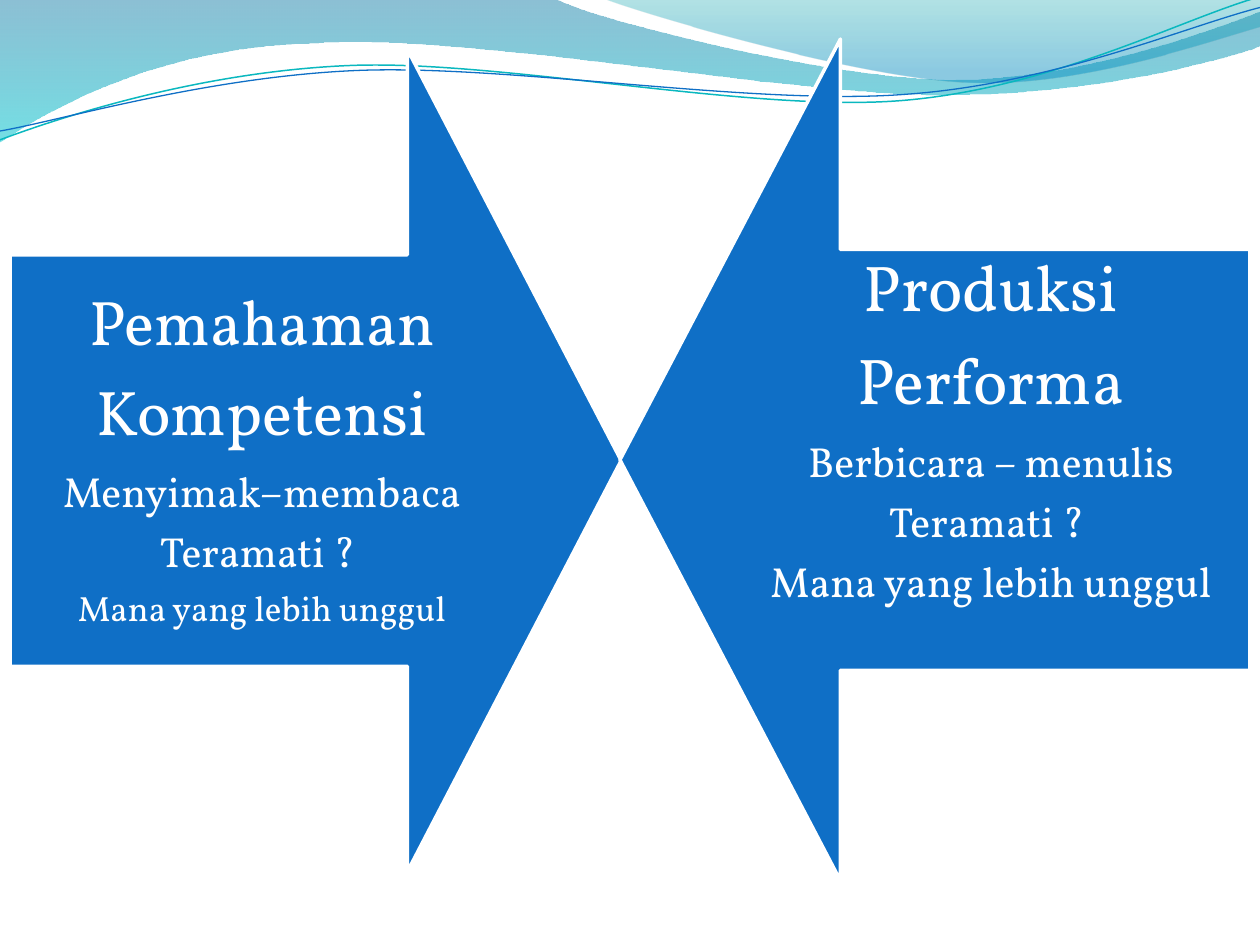
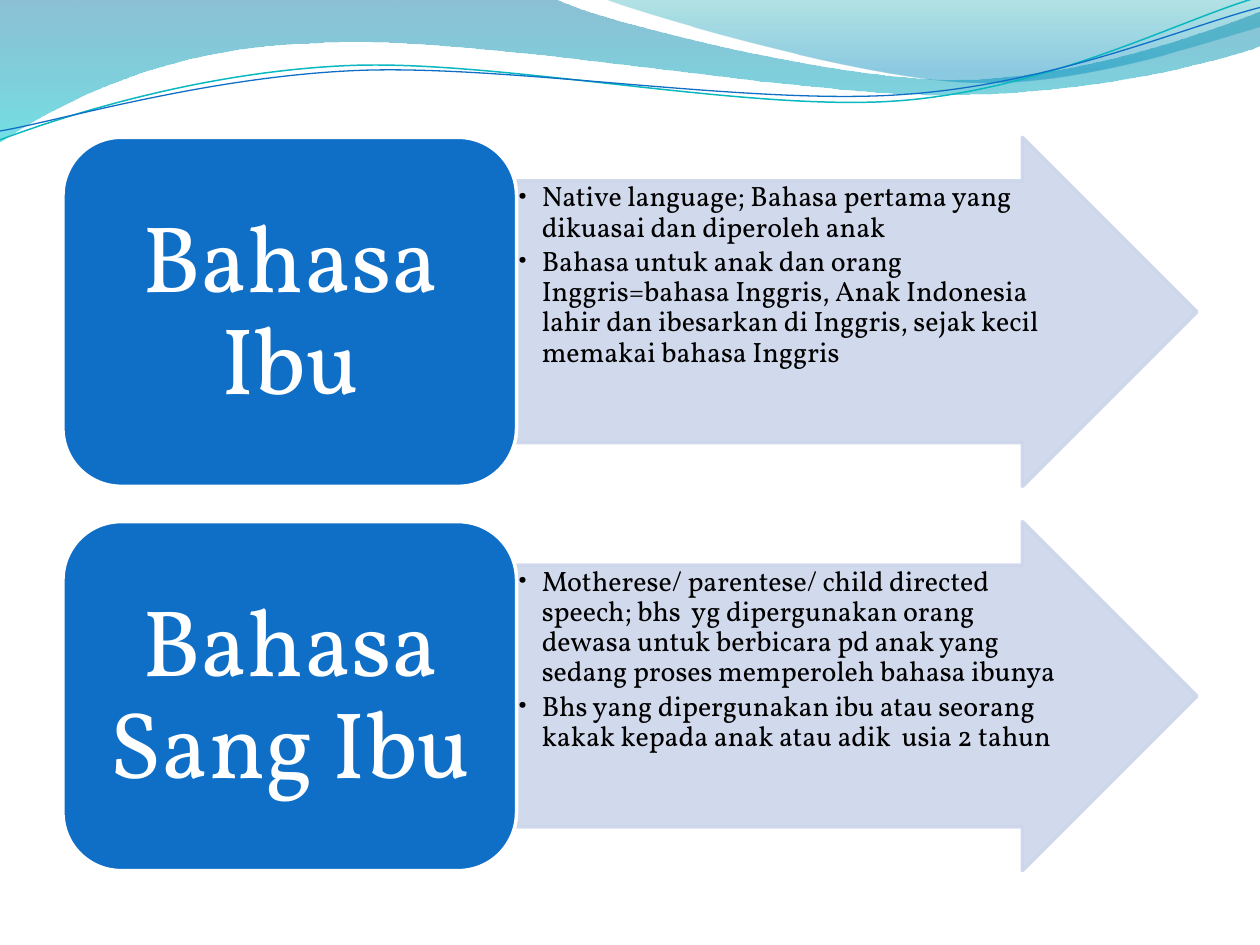
from dataclasses import dataclass
from math import cos, radians, sin

from lxml.etree import SubElement
from pptx import Presentation
from pptx.dml.color import RGBColor
from pptx.enum.shapes import MSO_SHAPE
from pptx.enum.text import MSO_ANCHOR, PP_ALIGN
from pptx.oxml.ns import qn
from pptx.util import Inches, Pt


@dataclass(frozen=True)
class Theme:
    font: str = "Vollkorn"
    blue: str = "0F6FC6"
    teal: str = "0AB8BF"
    pale: str = "CCD5EA"
    white: str = "FFFFFF"
    black: str = "000000"
    left_wave: tuple = ((0, "0074A1", 45), (1, "00C6CF", 55))
    right_wave: tuple = ((0, "00A1A9", 30), (0.8, "008BBF", 45))
    label_size: int = 54
    body_size: int = 16
    left_heading_size: int = 36
    right_heading_size: int = 37
    detail_size: int = 24
    small_size: int = 20
    outline: float = 2
    line_spacing: float = 0.9


THEME = Theme()
WAVE_TILT = -2.7

LEFT_WAVE = [
    [(0, 0)],
    [(4.4, -0.01)],
    [(4.76, 0.17), (6.64, 0.63), (7.58, 0.63)],
    [(8.53, 0.63), (9.58, 0.26), (10, 0.09)],
    [(10.01, 0.36)],
    [(9.83, 0.44), (8.7, 0.76), (7.46, 0.75)],
    [(6.22, 0.75), (3.82, 0.28), (2.57, 0.34)],
    [(1.29, 0.36), (0.46, 0.83), (-0.01, 1.13)],
    [(0, 0)],
]
RIGHT_WAVE = [
    [(4.79, -0.01)],
    [(5.09, 0.11), (6.82, 0.62), (7.69, 0.65)],
    [(8.56, 0.69), (9.61, 0.32), (10, 0.21)],
    [(10, 0)],
    [(4.79, -0.01)],
]
TEAL_WAVE = [
    [(0, 1.11)],
    [(0.48, 0.93), (1.58, 0.57), (2.77, 0.52)],
    [(3.95, 0.47), (5.93, 0.89), (7.13, 0.8)],
    [(8.33, 0.71), (9.38, 0.15), (9.98, -0.02)],
]
BLUE_WAVE = [
    [(0, 1.04)],
    [(0.47, 0.96), (1.64, 0.61), (2.83, 0.56)],
    [(4.03, 0.51), (5.97, 0.84), (7.17, 0.75)],
    [(8.36, 0.67), (9.41, 0.21), (10, 0.06)],
]


def color(value):
    return RGBColor.from_string(value)


def set_opacity(shape, percents):
    colors = shape._element.spPr.iter(qn("a:srgbClr"))
    for element, percent in zip(list(colors), percents):
        SubElement(element, qn("a:alpha")).set("val", str(percent * 1000))


def style_line(shape, line_color, width):
    shape.line.color.rgb = color(line_color)
    shape.line.width = Pt(width)


def turn(point, pivot, degrees):
    x, y = point[0] - pivot[0], point[1] - pivot[1]
    cosine, sine = cos(radians(degrees)), sin(radians(degrees))
    return pivot[0] + x * cosine - y * sine, pivot[1] + x * sine + y * cosine


def bend_lines(shape, segments):
    steps = list(shape._element.spPr.iter(qn("a:lnTo")))
    for segment in segments[1:]:
        lines, steps = steps[:len(segment)], steps[len(segment):]
        if len(segment) == 3:
            curve = lines[0].makeelement(qn("a:cubicBezTo"))
            lines[0].addprevious(curve)
            for line in lines:
                curve.append(line[0])
                line.getparent().remove(line)


def add_curve(slide, segments, close=False):
    start, *points = [(Inches(x), Inches(y)) for segment in segments for x, y in segment]
    builder = slide.shapes.build_freeform(*start)
    builder.add_line_segments(points, close=close)
    shape = builder.convert_to_shape()
    shape.shadow.inherit = False
    bend_lines(shape, segments)
    return shape


def add_wave_band(slide, segments, stops):
    shape = add_curve(slide, segments, close=True)
    shape.line.fill.background()
    shape.fill.gradient()
    shape.fill.gradient_angle = 270
    for stop, (position, stop_color, _) in zip(shape.fill.gradient_stops, stops):
        stop.position = position
        stop.color.rgb = color(stop_color)
    set_opacity(shape, [opacity for _, _, opacity in stops])
    return shape


def add_wave_line(slide, segments, pivot, line_color, width):
    level = [[turn(point, pivot, -WAVE_TILT) for point in segment] for segment in segments]
    shape = add_curve(slide, level)
    shape.rotation = WAVE_TILT
    shape.fill.background()
    style_line(shape, line_color, width)
    return shape


def add_wave_header(slide):
    waves = [
        add_wave_band(slide, LEFT_WAVE, THEME.left_wave),
        add_wave_band(slide, RIGHT_WAVE, THEME.right_wave),
        add_wave_line(slide, TEAL_WAVE, (4.99, 0.57), THEME.teal, 0.85),
        add_wave_line(slide, BLUE_WAVE, (5, 0.59), THEME.blue, 0.75),
    ]
    for wave in waves:
        slide.slide_layout.shapes.element.append(wave.element)


def add_block(slide, kind, box, fill, line, opacity=None, rotation=0, adjustments=()):
    shape = slide.shapes.add_shape(kind, *map(Inches, box))
    shape.shadow.inherit = False
    shape.rotation = rotation
    for index, value in enumerate(adjustments):
        shape.adjustments[index] = value
    shape.fill.solid()
    shape.fill.fore_color.rgb = color(fill)
    style_line(shape, line, THEME.outline)
    if opacity:
        set_opacity(shape, [opacity, opacity])


def add_bullet(paragraph, indent):
    properties = paragraph._p.get_or_add_pPr()
    properties.set("marL", str(Inches(indent)))
    properties.set("indent", str(-Inches(indent)))
    SubElement(properties, qn("a:buFont")).set("typeface", THEME.font)
    SubElement(properties, qn("a:buChar")).set("char", "•")


def add_text(slide, box, lines, insets, font_color=THEME.white, align=PP_ALIGN.CENTER,
             anchor=MSO_ANCHOR.MIDDLE, gap=0.35, bullet_indent=None):
    frame = slide.shapes.add_textbox(*map(Inches, box)).text_frame
    frame.word_wrap = True
    frame.vertical_anchor = anchor
    (frame.margin_left, frame.margin_top,
     frame.margin_right, frame.margin_bottom) = map(Inches, insets)
    for index, (text, size) in enumerate(lines):
        paragraph = frame.add_paragraph() if index else frame.paragraphs[0]
        paragraph.alignment = align
        paragraph.line_spacing = THEME.line_spacing
        paragraph.space_after = Pt(gap * size)
        if bullet_indent:
            paragraph.level = 1
            add_bullet(paragraph, bullet_indent)
        run = paragraph.add_run()
        run.text = text
        run.font.name = THEME.font
        run.font.size = Pt(size)
        run.font.color.rgb = color(font_color)


def add_facing_arrow(slide, box, rotation, text_box, lines, insets):
    add_block(slide, MSO_SHAPE.DOWN_ARROW, box, THEME.blue, THEME.white,
              rotation=rotation, adjustments=(0.5, 0.35))
    add_text(slide, text_box, lines, insets)


def add_definition(slide, top, label, points):
    add_block(slide, MSO_SHAPE.RIGHT_ARROW, (4.1, top, 5.4, 2.77), THEME.pale, THEME.pale,
              opacity=90, adjustments=(0.75, 0.5))
    add_text(slide, (4.1, top + 0.35, 4.36, 2.08),
             [(point, THEME.body_size) for point in points], [0.01] * 4,
             font_color=THEME.black, align=PP_ALIGN.LEFT, anchor=MSO_ANCHOR.TOP,
             gap=0.15, bullet_indent=0.19)
    add_block(slide, MSO_SHAPE.ROUNDED_RECTANGLE, (0.5, top, 3.6, 2.77),
              THEME.blue, THEME.white)
    add_text(slide, (0.64, top + 0.14, 3.33, 2.5), [(label, THEME.label_size)],
             (0.23, 0.11, 0.23, 0.11))


def add_slide(presentation):
    return presentation.slides.add_slide(presentation.slide_layouts[6])


def build_comparison(slide):
    add_facing_arrow(slide, (-0.76, 1.23, 6.53, 4.85), 270, (0.08, 2.02, 4, 3.26), [
        ("Pemahaman", THEME.left_heading_size),
        ("Kompetensi", THEME.left_heading_size),
        ("Menyimak–membaca", THEME.detail_size),
        ("Teramati ? ", THEME.detail_size),
        ("Mana yang lebih unggul", THEME.small_size),
    ], [0.28] * 4)
    add_facing_arrow(slide, (4.08, 1.15, 6.68, 5), 90, (5.8, 1.98, 4.13, 3.34), [
        ("Produksi", THEME.right_heading_size),
        ("Performa", THEME.right_heading_size),
        ("Berbicara – menulis", THEME.detail_size),
        ("Teramati ? ", THEME.detail_size),
        ("Mana yang lebih unggul", THEME.detail_size),
    ], (0.29, 0.29, 0.29, 0.75))


def build_definitions(slide):
    definitions = [
        ("Bahasa Ibu", [
            "Native language; Bahasa pertama yang dikuasai dan diperoleh anak",
            "Bahasa untuk anak dan orang Inggris=bahasa Inggris, Anak Indonesia "
            "lahir dan ibesarkan di Inggris, sejak kecil memakai bahasa Inggris",
        ]),
        ("Bahasa Sang Ibu", [
            "Motherese/ parentese/ child directed speech; bhs  yg dipergunakan orang "
            "dewasa untuk berbicara pd anak yang sedang proses memperoleh bahasa ibunya",
            "Bhs yang dipergunakan ibu atau seorang kakak kepada anak atau adik  "
            "usia 2 tahun",
        ]),
    ]
    for row, (label, points) in enumerate(definitions):
        add_definition(slide, 1.09 + row * 3.05, label, points)


def main():
    presentation = Presentation()
    presentation.slide_width = Inches(10)
    presentation.slide_height = Inches(7.5)
    comparison = add_slide(presentation)
    add_wave_header(comparison)
    build_comparison(comparison)
    build_definitions(add_slide(presentation))
    presentation.save("out.pptx")


if __name__ == "__main__":
    main()
